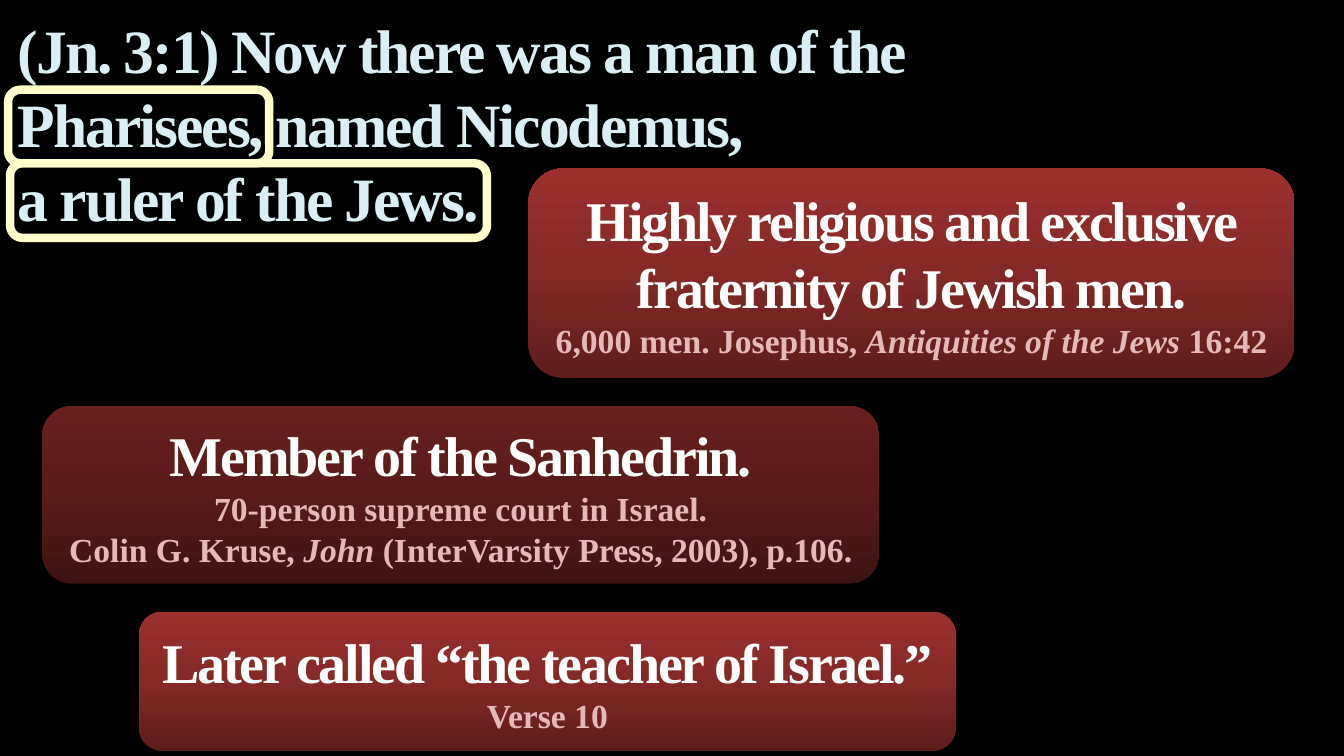
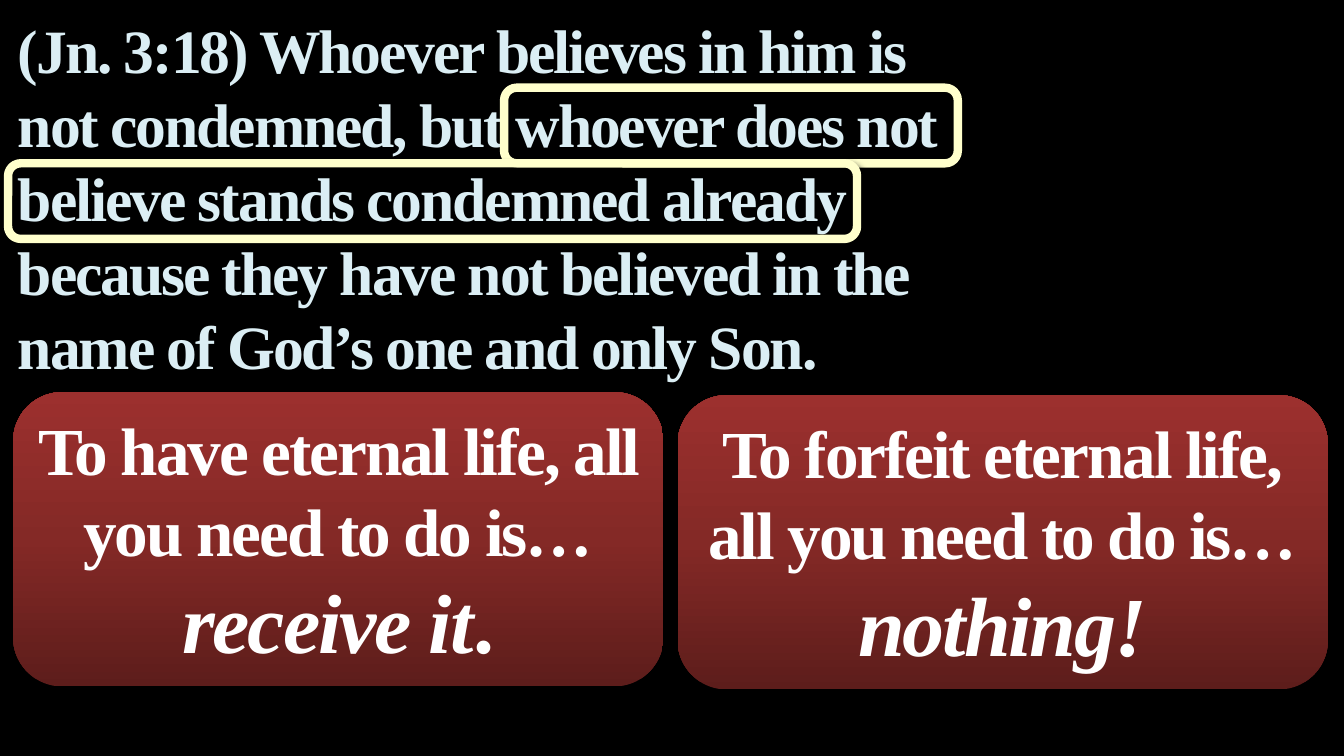
from dataclasses import dataclass

from lxml import etree
from pptx import Presentation
from pptx.dml.color import RGBColor
from pptx.enum.shapes import MSO_SHAPE
from pptx.enum.text import MSO_ANCHOR, MSO_AUTO_SIZE, PP_ALIGN
from pptx.oxml.ns import qn
from pptx.util import Inches, Pt

ROUNDED = MSO_SHAPE.ROUNDED_RECTANGLE
CENTER, LEFT = PP_ALIGN.CENTER, PP_ALIGN.LEFT
MIDDLE = MSO_ANCHOR.MIDDLE
GROW = MSO_AUTO_SIZE.SHAPE_TO_FIT_TEXT


@dataclass(frozen=True)
class Theme:
    font: str = "Times New Roman"
    background: str = "000000"
    verse: str = "DBEEF4"
    heading: str = "FFFFFF"
    source: str = "E6B9B8"
    highlight: str = "FFFFCC"
    red: tuple[str, ...] = ("5D1D1B", "842926", "9C302E")
    dark_red: tuple[str, ...] = ("3E1312", "581B1A", "68201E")
    verse_size: int = 44
    heading_size: int = 40
    source_size: int = 24
    contrast_size: int = 48
    answer_size: int = 60
    tight: float = -1.5
    highlight_width: int = 6


THEME = Theme()


@dataclass(frozen=True)
class Box:
    left: float
    top: float
    width: float
    height: float

    def lengths(self) -> tuple:
        return tuple(map(Inches, (self.left, self.top, self.width, self.height)))


@dataclass(frozen=True)
class Shadow:
    opacity: int
    blur: float
    distance: float
    angle: int


@dataclass(frozen=True)
class Line:
    """One paragraph; pieces between asterisks are italic."""
    text: str
    size: int
    color: str = THEME.heading
    spacing: float = THEME.tight


@dataclass(frozen=True)
class Card:
    box: Box
    lines: tuple[Line, ...]
    colors: tuple[str, ...] = THEME.red


@dataclass(frozen=True)
class VerseSlide:
    verse: tuple[str, ...]
    verse_height: float
    cards: tuple[Card, ...]
    highlights: tuple[Box, ...]
    highlight_shadow: Shadow | None = None


CARD_SHADOW = Shadow(32, 3.5, 2.2, 90)
HIGHLIGHT_SHADOW = Shadow(40, 4, 3, 45)


def heading(text: str) -> Line:
    return Line(text, THEME.heading_size)


def source(text: str) -> Line:
    return Line(text, THEME.source_size, THEME.source, 0)


def contrast(text: str) -> Line:
    return Line(text, THEME.contrast_size)


def answer(text: str) -> Line:
    return Line(text, THEME.answer_size)


# Slide content
SLIDES = (
    VerseSlide(
        verse=("(Jn. 3:1) Now there was a man of the Pharisees, named Nicodemus,",
               "a ruler of the Jews."),
        verse_height=2.32,
        cards=(
            Card(Box(5.24, 1.67, 7.6, 2.08), (
                heading("Highly religious and exclusive fraternity of Jewish men."),
                source("6,000 men. Josephus, *Antiquities of the Jews* 16:42"))),
            Card(Box(0.42, 4.03, 8.3, 1.76), (
                heading("Member of the Sanhedrin."),
                source("70-person supreme court in Israel."),
                source("Colin G. Kruse, *John* (InterVarsity Press, 2003), p.106.")),
                THEME.dark_red),
            Card(Box(1.38, 6.07, 8.1, 1.38), (
                heading("Later called “the teacher of Israel.”"),
                source("Verse 10"))),
        ),
        highlights=(Box(0.08, 0.89, 2.59, 0.73), Box(0.1, 1.62, 4.73, 0.74)),
    ),
    VerseSlide(
        verse=("(Jn. 3:18) Whoever believes in him is not condemned, but whoever "
               "does not believe stands condemned already because they have not "
               "believed in the name of God’s one and only Son.",),
        verse_height=3.8,
        cards=(
            Card(Box(0.13, 3.89, 6.45, 2.92), (
                contrast("To have eternal life, all you need to do is…"),
                answer("*receive it*."))),
            Card(Box(6.72, 3.92, 6.45, 2.92), (
                contrast("To forfeit eternal life,"),
                contrast("all you need to do is…"),
                answer("*nothing!*"))),
        ),
        highlights=(Box(5, 0.87, 4.5, 0.75), Box(0.08, 1.62, 8.42, 0.75)),
        highlight_shadow=HIGHLIGHT_SHADOW,
    ),
)


# Drawing helpers
def add_color(parent, color: str):
    return etree.SubElement(parent, qn("a:srgbClr"), val=color)


def set_gradient(shape, colors: tuple[str, ...]) -> None:
    """Spread the colours evenly from the bottom of the shape to its top."""
    shape.fill.gradient()
    shape.fill.gradient_angle = 90
    stops = shape.element.spPr.find(qn("a:gradFill")).find(qn("a:gsLst"))
    for stop in list(stops):
        stops.remove(stop)
    for index, color in enumerate(colors):
        position = index * 100000 // (len(colors) - 1)
        add_color(etree.SubElement(stops, qn("a:gs"), pos=str(position)), color)


def set_shadow(shape, shadow: Shadow | None) -> None:
    shape.shadow.inherit = False
    if shadow is None:
        return
    effects = shape.element.spPr.find(qn("a:effectLst"))
    outer = etree.SubElement(
        effects, qn("a:outerShdw"), blurRad=str(Pt(shadow.blur)),
        dist=str(Pt(shadow.distance)), dir=str(shadow.angle * 60000), rotWithShape="0")
    color = add_color(outer, "000000")
    etree.SubElement(color, qn("a:alpha"), val=str(shadow.opacity * 1000))


def add_text(paragraph, text: str, *, size: int, color: str, spacing: float,
             align=LEFT) -> None:
    paragraph.alignment = align
    for index, piece in enumerate(text.split("*")):
        if not piece:
            continue
        run = paragraph.add_run()
        run.text = piece
        run.font.name = THEME.font
        run.font.size = Pt(size)
        run.font.bold = True
        run.font.italic = index % 2 == 1
        run.font.color.rgb = RGBColor.from_string(color)
        run.font._element.set("spc", str(round(spacing * 100)))


def write_lines(frame, lines: tuple[Line, ...], align=LEFT) -> None:
    frame.word_wrap = True
    for index, line in enumerate(lines):
        paragraph = frame.add_paragraph() if index else frame.paragraphs[0]
        add_text(paragraph, line.text, size=line.size, color=line.color,
                 spacing=line.spacing, align=align)


def add_verse(slide, verse: tuple[str, ...], height: float) -> None:
    shape = slide.shapes.add_textbox(*Box(0.08, 0.07, 9.34, height).lengths())
    lines = tuple(Line(text, THEME.verse_size, THEME.verse) for text in verse)
    write_lines(shape.text_frame, lines)
    shape.text_frame.auto_size = GROW


def add_card(slide, card: Card) -> None:
    shape = slide.shapes.add_shape(ROUNDED, *card.box.lengths())
    set_gradient(shape, card.colors)
    shape.line.fill.background()
    set_shadow(shape, CARD_SHADOW)
    shape.text_frame.vertical_anchor = MIDDLE
    write_lines(shape.text_frame, card.lines, CENTER)


def add_highlight(slide, box: Box, shadow: Shadow | None) -> None:
    shape = slide.shapes.add_shape(ROUNDED, *box.lengths())
    shape.fill.background()
    shape.line.color.rgb = RGBColor.from_string(THEME.highlight)
    shape.line.width = Pt(THEME.highlight_width)
    set_shadow(shape, shadow)


def build_slide(presentation, content: VerseSlide) -> None:
    slide = presentation.slides.add_slide(presentation.slide_layouts[6])
    fill = slide.background.fill
    fill.solid()
    fill.fore_color.rgb = RGBColor.from_string(THEME.background)
    add_verse(slide, content.verse, content.verse_height)
    for card in content.cards:
        add_card(slide, card)
    for box in content.highlights:
        add_highlight(slide, box, content.highlight_shadow)


def main() -> None:
    presentation = Presentation()
    presentation.slide_width = Inches(13.33)
    presentation.slide_height = Inches(7.5)
    for content in SLIDES:
        build_slide(presentation, content)
    presentation.save("out.pptx")


if __name__ == "__main__":
    main()
